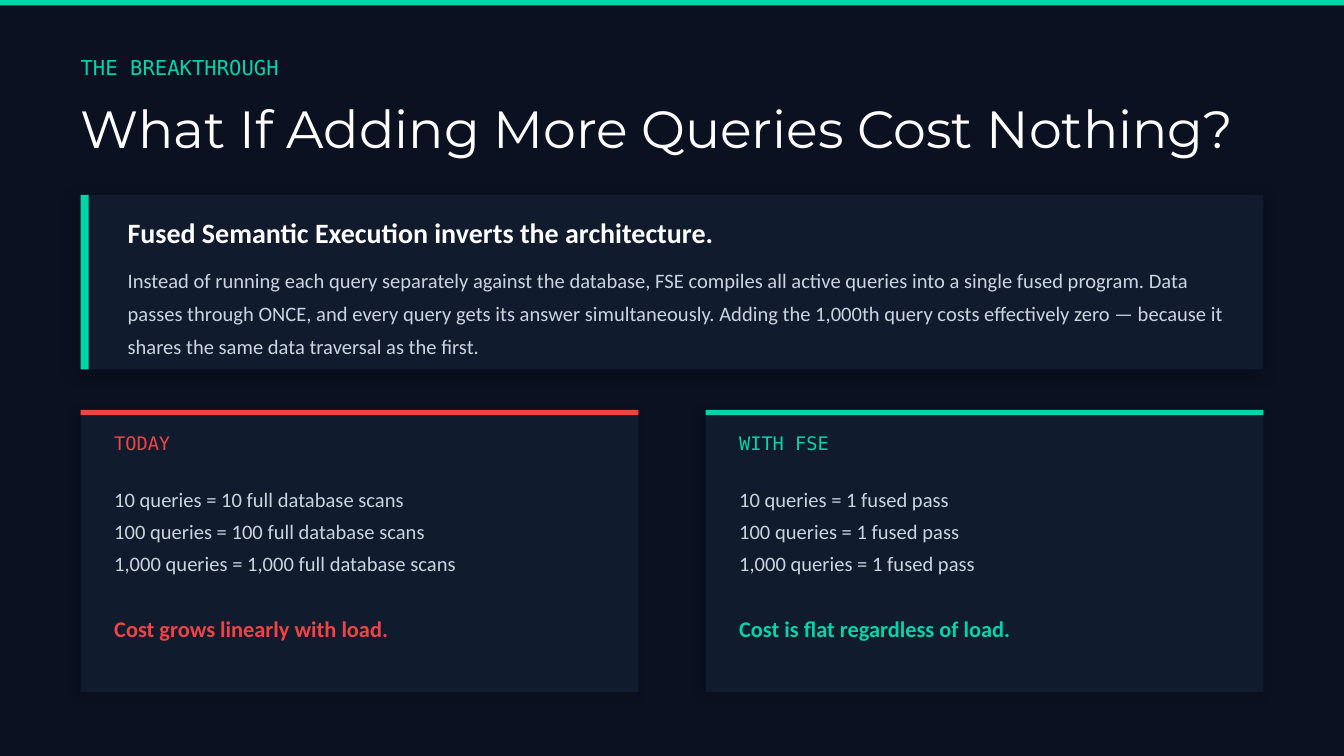
from typing import NamedTuple, Optional

from lxml.etree import SubElement
from pptx import Presentation
from pptx.dml.color import RGBColor
from pptx.enum.shapes import MSO_SHAPE
from pptx.enum.text import MSO_ANCHOR
from pptx.oxml.ns import qn
from pptx.slide import Slide
from pptx.util import Pt

NAVY, PANEL = "0B1120", "111B2E"
TEAL, RED, WHITE, GREY = "00D4AA", "EF4444", "FFFFFF", "CBD5E1"
MONO, HEADING, BODY = "DejaVu Sans Mono", "Montserrat", "Calibri"
MARGIN = 43.2
CARD_TOP, CARD_WIDTH, CARD_HEIGHT = 219.6, 298.8, 151.2
CARD_GAP = 36
CARD_INDENT = 18


class Area(NamedTuple):
    left: float
    top: float
    width: float
    height: float


class Shadow(NamedTuple):
    opacity: int
    blur: float
    distance: float


class Line(NamedTuple):
    text: str
    size: float
    color: str
    font: str = BODY
    bold: bool = False
    before: float = 0
    after: float = 0
    spacing: Optional[float] = None


class Card(NamedTuple):
    label: str
    facts: list[str]
    verdict: str
    color: str


CARDS = [
    Card("TODAY",
         ["10 queries = 10 full database scans",
          "100 queries = 100 full database scans",
          "1,000 queries = 1,000 full database scans"],
         "Cost grows linearly with load.", RED),
    Card("WITH FSE",
         ["10 queries = 1 fused pass",
          "100 queries = 1 fused pass",
          "1,000 queries = 1 fused pass"],
         "Cost is flat regardless of load.", TEAL),
]


def paint(color_format, color: str) -> None:
    color_format.rgb = RGBColor.from_string(color)


def add_rectangle(page: Slide, area: Area, color: str,
                  shadow: Optional[Shadow] = None) -> None:
    box = page.shapes.add_shape(MSO_SHAPE.RECTANGLE, *map(Pt, area))
    box.fill.solid()
    paint(box.fill.fore_color, color)
    box.line.fill.background()
    box.shadow.inherit = False
    if shadow:
        effects = box._element.spPr.find(qn("a:effectLst"))
        outer = SubElement(effects, qn("a:outerShdw"), {
            "blurRad": str(Pt(shadow.blur)), "dist": str(Pt(shadow.distance)),
            "dir": str(135 * 60000), "algn": "bl", "rotWithShape": "0"})
        black = SubElement(outer, qn("a:srgbClr"), val="000000")
        SubElement(black, qn("a:alpha"), val=str(shadow.opacity * 1000))


def add_text(page: Slide, area: Area, *lines: Line) -> None:
    frame = page.shapes.add_textbox(*map(Pt, area)).text_frame
    frame.word_wrap = True
    frame.vertical_anchor = MSO_ANCHOR.MIDDLE
    frame.margin_left = frame.margin_right = Pt(0)
    frame.margin_top = frame.margin_bottom = Pt(0)
    for index, line in enumerate(lines):
        para = frame.add_paragraph() if index else frame.paragraphs[0]
        if line.before:
            para.space_before = Pt(line.before)
        if line.after:
            para.space_after = Pt(line.after)
        if line.spacing:
            para.line_spacing = line.spacing
        span = para.add_run()
        span.text = line.text
        span.font.name = line.font
        span.font.size = Pt(line.size)
        span.font.bold = line.bold
        paint(span.font.color, line.color)


def add_card(page: Slide, card: Card, left: float) -> None:
    add_rectangle(page, Area(left, CARD_TOP, CARD_WIDTH, CARD_HEIGHT), PANEL,
                  Shadow(15, 6, 2))
    add_rectangle(page, Area(left, CARD_TOP, CARD_WIDTH, 2.88), card.color)
    text_left = left + CARD_INDENT
    add_text(page, Area(text_left, CARD_TOP + 7.2, 144, 21.6),
             Line(card.label, 10, card.color, MONO))
    facts = [Line(fact, 11, GREY, after=4) for fact in card.facts]
    verdict = Line(card.verdict, 12, card.color, bold=True, before=17.4, after=4)
    add_text(page, Area(text_left, CARD_TOP + 32.4, 259.2, 100.8), *facts, verdict)


def add_header(page: Slide) -> None:
    add_rectangle(page, Area(0, 0, 720, 2.88), TEAL)
    add_text(page, Area(MARGIN, 21.6, 576, 28.8),
             Line("THE BREAKTHROUGH", 11, TEAL, MONO))
    add_text(page, Area(MARGIN, 46.8, 633.6, 43.2),
             Line("What If Adding More Queries Cost Nothing?", 28, WHITE, HEADING))


def add_callout(page: Slide) -> None:
    top, height, text_left = 104.4, 93.6, 68.4
    add_rectangle(page, Area(MARGIN, top, 633.6, height), PANEL, Shadow(25, 8, 3))
    add_rectangle(page, Area(MARGIN, top, 4.32, height), TEAL)
    add_text(page, Area(text_left, top + 7.2, 590.4, 25.2),
             Line("Fused Semantic Execution inverts the architecture.",
                  15, WHITE, bold=True))
    add_text(page, Area(text_left, top + 36, 590.4, 50.4),
             Line("Instead of running each query separately against the database, "
                  "FSE compiles all active queries into a single fused program. "
                  "Data passes through ONCE, and every query gets its answer "
                  "simultaneously. Adding the 1,000th query costs effectively "
                  "zero — because it shares the same data traversal as the first.",
                  11, GREY, spacing=1.35))


def main() -> None:
    deck = Presentation()
    deck.slide_width, deck.slide_height = Pt(720), Pt(405)
    page = deck.slides.add_slide(deck.slide_layouts[6])
    page.background.fill.solid()
    paint(page.background.fill.fore_color, NAVY)
    add_header(page)
    add_callout(page)
    for column, card in enumerate(CARDS):
        add_card(page, card, MARGIN + column * (CARD_WIDTH + CARD_GAP))
    deck.save("out.pptx")


if __name__ == "__main__":
    main()
